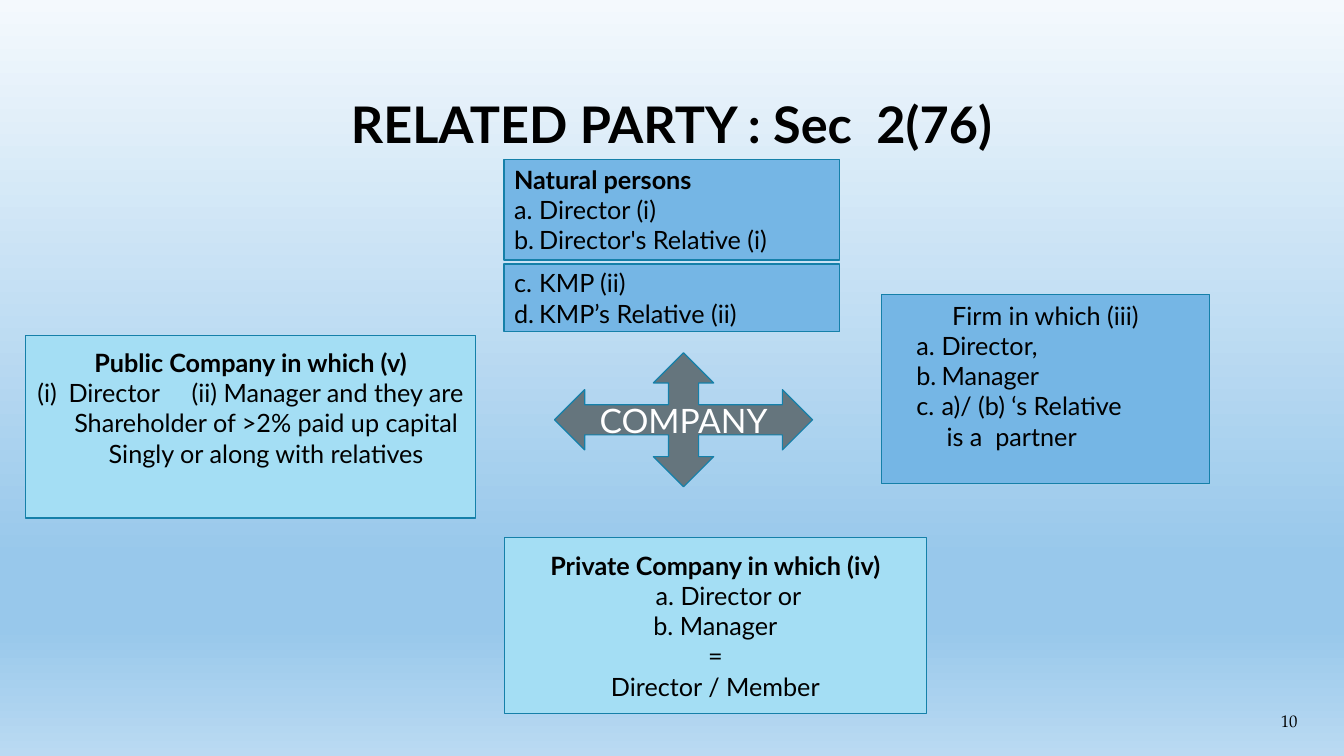
from lxml.etree import SubElement
from pptx import Presentation
from pptx.dml.color import RGBColor
from pptx.enum.shapes import MSO_SHAPE
from pptx.enum.text import MSO_ANCHOR, PP_ALIGN
from pptx.oxml import parse_xml
from pptx.oxml.ns import nsdecls, qn
from pptx.util import Inches, Pt

COLORS = {"black": "000000", "white": "FFFFFF", "line": "1580A9", "arrow": "65757D",
          "person": "75B6E5", "company": "A4DEF4"}
BACKGROUND_STOPS = [(0, "F4F9FD"), (74, "98C8EB"), (83, "98C8EB"), (100, "BADAF2")]
LETTERS = "alphaLcPeriod"
ROMAN = "romanLcParenBoth"
LEFT, CENTER, RIGHT = PP_ALIGN.LEFT, PP_ALIGN.CENTER, PP_ALIGN.RIGHT
INSETS = (0.1, 0.05, 0.1, 0.05)
WIDE_INSETS = (0.13, 0.07, 0.13, 0.07)

TITLE = "RELATED PARTY : Sec  2(76)"
PAGE_NUMBER = "10"


def line(text, align=LEFT, margin=0, indent=0, number=None, start=1, bold=False,
         size=18, color="black", font="Lato"):
    return dict(text=text, align=align, margin=margin, indent=indent, number=number,
                start=start, bold=bold, size=size, color=color, font=font)


def lettered(text, margin=0.25, start=1):
    return line(text, margin=margin, indent=-0.25, number=LETTERS, start=start)


# place, preset shape, fill, room kept free below the text, lines
SHAPES = [
    ((5, 5.33, 4.19, 1.75), MSO_SHAPE.RECTANGLE, "company", 0, [
        line("Private Company in which (iv)", CENTER, bold=True),
        line("a. Director or", CENTER, 0.38, -0.12),
        line("b. Manager", CENTER, 0.38, -0.38),
        line("=", CENTER, 0.38, -0.38),
        line("Director / Member", CENTER, 0.38, -0.38)]),
    ((8.74, 2.92, 3.26, 1.88), MSO_SHAPE.RECTANGLE, "person", 0.27, [
        line("Firm in which (iii)", CENTER),
        lettered("Director,", 0.5),
        lettered("Manager", 0.5),
        lettered("a)/ (b) ‘s Relative", 0.5, start=3),
        line("is a  partner", margin=0.55)]),
    ((0.25, 3.33, 4.47, 1.81), MSO_SHAPE.RECTANGLE, "company", 0.38, [
        line("Public Company in which (v)", CENTER, bold=True),
        line("Director     (ii) Manager and they are Shareholder of >2% paid up capital "
             "Singly or along with relatives", CENTER, 0.31, -0.31, ROMAN)]),
    ((5, 1.58, 3.33, 1), MSO_SHAPE.RECTANGLE, "person", 0, [
        line("Natural persons", bold=True),
        lettered("Director (i)"),
        lettered("Director's Relative (i)")]),
    ((5.5, 3.5, 2.56, 1.33), MSO_SHAPE.QUAD_ARROW, "arrow", 0, [
        line("COMPANY", CENTER, size=24, color="white")]),
    ((5, 2.62, 3.33, 0.67), MSO_SHAPE.RECTANGLE, "person", 0, [
        lettered("KMP (ii)", start=3),
        lettered("KMP’s Relative (ii)", start=3)]),
]


def rgb(name):
    return RGBColor.from_string(COLORS[name])


def paint_background(slide):
    fill = slide.background.fill
    fill.gradient()
    fill.gradient_angle = 270
    stops = "".join(f'<a:gs pos="{position * 1000}"><a:srgbClr val="{color}"/></a:gs>'
                    for position, color in BACKGROUND_STOPS)
    old_stops = next(slide.background._cSld.iter(qn("a:gsLst")))
    old_stops.getparent().replace(
        old_stops, parse_xml(f'<a:gsLst {nsdecls("a")}>{stops}</a:gsLst>'))


def write_lines(shape, lines, anchor=MSO_ANCHOR.MIDDLE, insets=INSETS, room_below=0):
    frame = shape.text_frame
    frame.word_wrap = True
    frame.vertical_anchor = anchor
    left, top, right, bottom = insets
    frame.margin_left, frame.margin_top = Inches(left), Inches(top)
    frame.margin_right, frame.margin_bottom = Inches(right), Inches(bottom + room_below)
    for index, item in enumerate(lines):
        paragraph = frame.add_paragraph() if index else frame.paragraphs[0]
        paragraph.text = item["text"]
        paragraph.alignment = item["align"]
        font = paragraph.font
        font.name, font.size, font.bold = item["font"], Pt(item["size"]), item["bold"]
        font.color.rgb = rgb(item["color"])
        properties = paragraph._p.get_or_add_pPr()
        properties.set("marL", str(Inches(item["margin"])))
        properties.set("indent", str(Inches(item["indent"])))
        if item["number"]:
            numbering = SubElement(properties, qn("a:buAutoNum"), type=item["number"])
            if item["start"] > 1:
                numbering.set("startAt", str(item["start"]))
            properties.insert(0, numbering)


def place(values):
    return [Inches(value) for value in values]


def main():
    presentation = Presentation()
    presentation.slide_width, presentation.slide_height = place((13.33, 7.5))
    slide = presentation.slides.add_slide(presentation.slide_layouts[5])
    paint_background(slide)

    title = slide.shapes.title
    title.left, title.top, title.width, title.height = place((1.33, 0.17, 10.66, 1.42))
    write_lines(title, [line(TITLE, CENTER, bold=True, size=36)],
                MSO_ANCHOR.BOTTOM, WIDE_INSETS)

    for box, preset, color, room_below, lines in SHAPES:
        shape = slide.shapes.add_shape(preset, *place(box))
        shape.shadow.inherit = False
        shape.fill.solid()
        shape.fill.fore_color.rgb = rgb(color)
        shape.line.color.rgb = rgb("line")
        shape.line.width = Pt(0.85)
        write_lines(shape, lines, room_below=room_below)

    page_number = slide.shapes.add_textbox(*place((12.11, 7.05, 0.89, 0.2)))
    write_lines(page_number, [line(PAGE_NUMBER, RIGHT, size=12, font="TeX Gyre Pagella")],
                insets=WIDE_INSETS)
    presentation.save("out.pptx")


if __name__ == "__main__":
    main()
